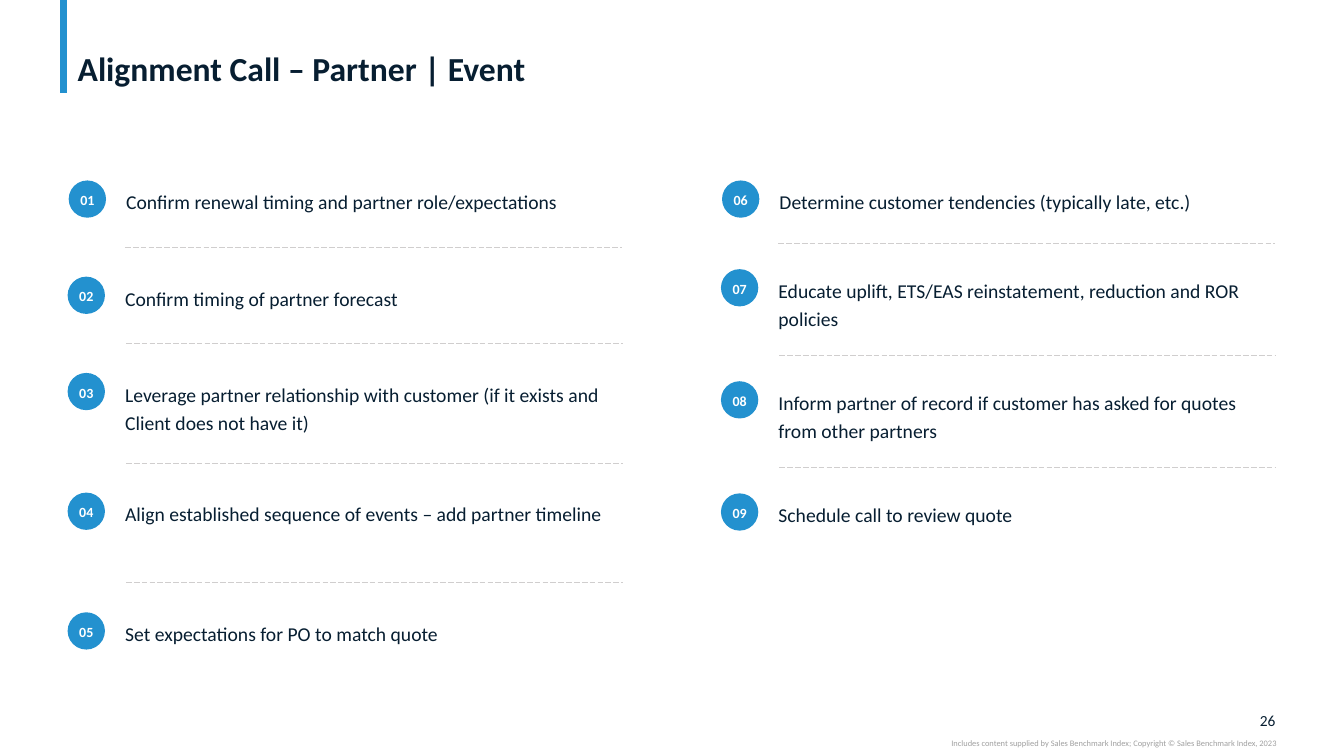
from lxml import etree
from pptx import Presentation
from pptx.dml.color import RGBColor
from pptx.enum.dml import MSO_LINE
from pptx.enum.shapes import MSO_CONNECTOR, MSO_SHAPE
from pptx.enum.text import MSO_ANCHOR, MSO_AUTO_SIZE, PP_ALIGN
from pptx.oxml.ns import qn
from pptx.util import Inches, Pt

LEFT, CENTER, RIGHT = PP_ALIGN.LEFT, PP_ALIGN.CENTER, PP_ALIGN.RIGHT
TOP, MIDDLE, BOTTOM = MSO_ANCHOR.TOP, MSO_ANCHOR.MIDDLE, MSO_ANCHOR.BOTTOM
LONG_DASH = MSO_LINE.LONG_DASH
FIXED = MSO_AUTO_SIZE.NONE
STRAIGHT = MSO_CONNECTOR.STRAIGHT
OVAL = MSO_SHAPE.OVAL

COLORS = {"accent": "2391CF", "ink": "071E31", "rule": "D0CECE",
          "credit": "A0A0A0", "white": "FFFFFF"}
FONT = "Calibri"

# All lengths are percentages of the slide's width or height
FIRST_TOP = 23.87
BADGE_W, BADGE_H = 2.78, 4.93
TEXT_DX, TEXT_DY, TEXT_W = 4.28, 0.67, 36.83
RULE_DX, RULE_W = 4.35, 36.95
LINE_H = 3.65
EXTRA_PITCH = 3.1   # added to the pitch below a two-line step
NUDGE = 0.08        # the first step of each column sits slightly to the right


class CallSlide:
    def __init__(self, prs):
        self.width, self.height = prs.slide_width, prs.slide_height
        self.slide = prs.slides.add_slide(prs.slide_layouts[5])

    def x(self, percent):
        return round(self.width * percent / 100)

    def y(self, percent):
        return round(self.height * percent / 100)

    def box(self, left, top, width, height):
        return self.x(left), self.y(top), self.x(width), self.y(height)

    def set_text(self, shape, text, size, color, align=LEFT, anchor=TOP,
                 spacing=None, bold=False, insets=(0, 0, 0, 0)):
        frame = shape.text_frame
        frame.word_wrap = True
        frame.auto_size = FIXED
        frame.vertical_anchor = anchor
        (frame.margin_left, frame.margin_top,
         frame.margin_right, frame.margin_bottom) = map(Inches, insets)
        frame.text = text
        paragraph = frame.paragraphs[0]
        paragraph.alignment = align
        paragraph.line_spacing = spacing
        font = paragraph.font
        font.name, font.size, font.bold = FONT, Pt(size), bold
        font.color.rgb = RGBColor.from_string(COLORS[color])

    def title(self, text, *place):
        heading = self.slide.shapes.title
        heading.left, heading.top, heading.width, heading.height = self.box(*place)
        self.set_text(heading, text, 24, "ink", anchor=BOTTOM, spacing=0.9,
                      bold=True, insets=(0.1, 0, 0.1, 0))

    def label(self, text, place, size, color, parent=None, **style):
        shapes = (parent or self.slide).shapes
        self.set_text(shapes.add_textbox(*self.box(*place)), text, size, color, **style)

    def line(self, start, end, color, weight, dash=None):
        connector = self.slide.shapes.add_connector(
            STRAIGHT, self.x(start[0]), self.y(start[1]),
            self.x(end[0]), self.y(end[1]))
        connector.line.color.rgb = RGBColor.from_string(COLORS[color])
        connector.line.width = Pt(weight)
        if dash is not None:
            connector.line.dash_style = dash
        etree.SubElement(connector._element.spPr, qn("a:effectLst"))

    def step(self, number, text, left, top, lines):
        group = self.slide.shapes.add_group_shape()
        self.label(text, (left + TEXT_DX, top + TEXT_DY, TEXT_W, lines * LINE_H),
                   14, "ink", parent=group, spacing=1.2)
        badge = group.shapes.add_shape(OVAL, *self.box(left, top, BADGE_W, BADGE_H))
        badge.shadow.inherit = False
        badge.fill.solid()
        badge.fill.fore_color.rgb = RGBColor.from_string(COLORS["accent"])
        badge.line.fill.background()
        self.set_text(badge, f"{number:02d}", 10, "white", align=CENTER, anchor=MIDDLE,
                      spacing=0.9, bold=True, insets=(0, 0.04, 0, 0))

    def column(self, first_number, left, pitch, rule_gap, steps):
        top = FIRST_TOP
        for index, (text, lines) in enumerate(steps):
            self.step(first_number + index, text,
                      left if index else left + NUDGE, top, lines)
            top += pitch + EXTRA_PITCH * (lines - 1)
            if index < len(steps) - 1:
                rule_left = left + RULE_DX - (0 if index else NUDGE)
                rule_y = top - rule_gap
                self.line((rule_left, rule_y), (rule_left + RULE_W, rule_y),
                          "rule", 0.5, LONG_DASH)


# Steps of the call, each with the number of lines it is given
PARTNER_STEPS = [
    ("Confirm renewal timing and partner role/expectations", 1),
    ("Confirm timing of partner forecast", 1),
    ("Leverage partner relationship with customer "
     "(if it exists and Client does not have it)", 2),
    ("Align established sequence of events – add partner timeline", 2),
    ("Set expectations for PO to match quote", 1),
]
CUSTOMER_STEPS = [
    ("Determine customer tendencies (typically late, etc.)", 1),
    ("Educate uplift, ETS/EAS reinstatement, reduction and ROR policies", 2),
    ("Inform partner of record if customer has asked for quotes "
     "from other partners", 2),
    ("Schedule call to review quote", 1),
]


def main():
    prs = Presentation()
    prs.slide_width, prs.slide_height = Inches(13.33), Inches(7.5)
    call = CallSlide(prs)

    # Accent bar and title
    call.line((4.73, 0), (4.73, 12.27), "accent", 5)
    call.title("Alignment Call – Partner | Event", 5.03, 0.53, 89.95, 11.2)

    # Page number and copyright line
    call.label("26", (92.42, 94, 2.48, 2.53), 11, "ink", align=RIGHT, anchor=MIDDLE)
    call.label("Includes content supplied by Sales Benchmark Index; "
               "Copyright © Sales Benchmark Index, 2023",
               (56.26, 97.6, 38.71, 1.33), 6, "credit", align=RIGHT)

    # Two columns of numbered steps
    call.column(1, 5.03, 12.73, 3.93, PARTNER_STEPS)
    call.column(1 + len(PARTNER_STEPS), 53.64, 11.73, 3.47, CUSTOMER_STEPS)

    prs.save("out.pptx")


if __name__ == "__main__":
    main()
